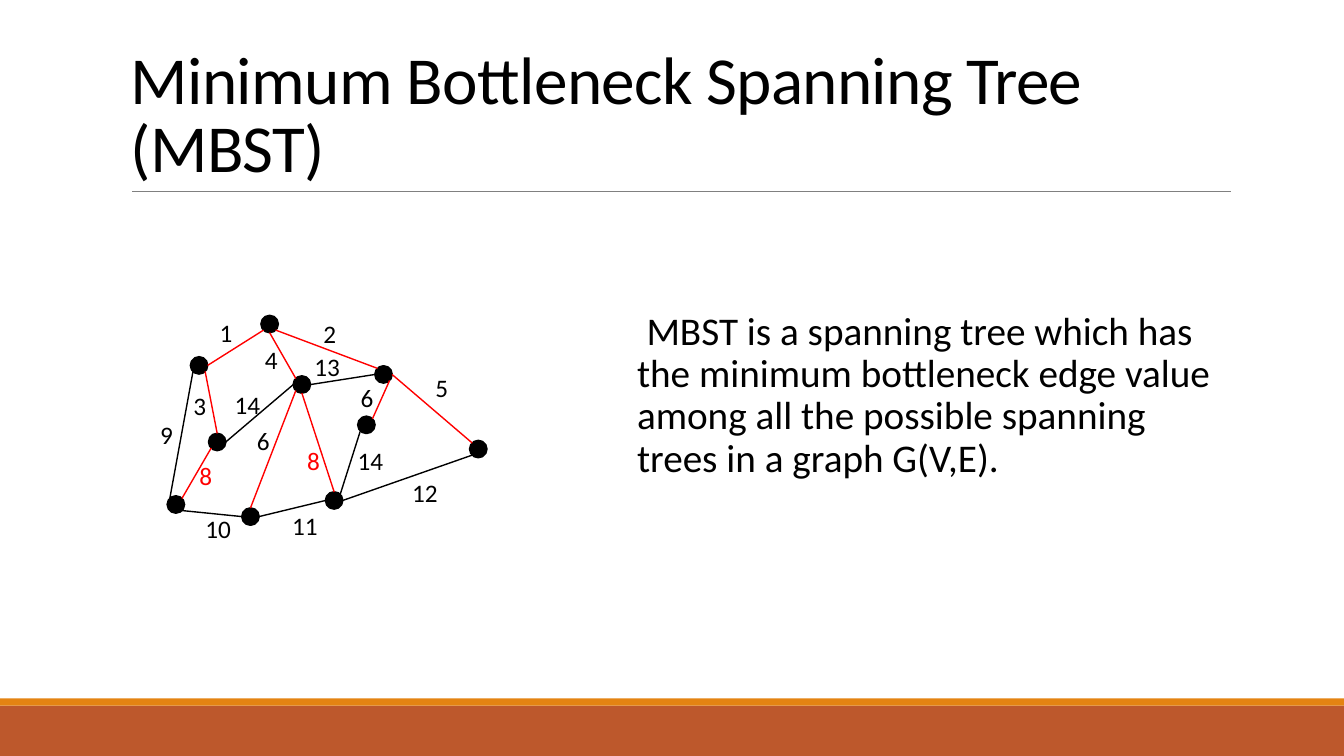
"""Draw the minimum bottleneck spanning tree slide."""
from dataclasses import dataclass
from math import cos, radians, sin

from lxml import etree
from pptx import Presentation
from pptx import util as u
from pptx.dml.color import RGBColor
from pptx.enum import shapes, text
from pptx.oxml import ns

COLOURS = {"ink": "000000", "tree": "FF0000", "rule": "808080",
           "band": "BD582C", "stripe": "E48312"}
CELL = u.Inches(0.1)
COLUMNS, ROWS = 133.33, 75
DIAMETER = 1.7
COMPASS = {"E": 0, "SE": 45, "S": 90, "SW": 135,
           "W": 180, "NW": 225, "N": 270, "NE": 315}


@dataclass(frozen=True)
class Node:
    """A vertex, placed by the column and row of its top-left corner."""
    column: float
    row: float

    def site(self, direction: str) -> tuple[float, float]:
        """Return the point of the rim in a compass direction."""
        angle, radius = radians(COMPASS[direction]), DIAMETER / 2
        return (self.column + radius * (1 + cos(angle)),
                self.row + radius * (1 + sin(angle)))


@dataclass(frozen=True)
class Edge:
    """A line between the rims of two nodes."""
    start: str
    leaving: str
    end: str
    arriving: str
    colour: str = "ink"


@dataclass(frozen=True)
class Weight:
    """The number beside an edge."""
    value: int
    column: float
    row: float
    colour: str = "ink"


NODES = {
    "left": Node(18.9, 35.4), "top": Node(25.9, 31.3),
    "hub": Node(29.1, 37.3), "inner": Node(20.7, 43),
    "middle": Node(35.5, 41.3), "base": Node(24, 50.4),
    "right": Node(37.2, 36.3), "corner": Node(16.6, 49.2),
    "foot": Node(32.3, 48.8), "far": Node(46.6, 43.7),
}
EDGES = [
    Edge("top", "SW", "left", "E", "tree"),
    Edge("top", "S", "hub", "NW", "tree"),
    Edge("top", "SE", "right", "NW", "tree"),
    Edge("right", "SE", "middle", "NE", "tree"),
    Edge("right", "E", "far", "NW", "tree"),
    Edge("hub", "S", "foot", "N", "tree"),
    Edge("left", "SE", "inner", "N", "tree"),
    Edge("hub", "SW", "base", "N", "tree"),
    Edge("inner", "SW", "corner", "NE", "tree"),
    Edge("inner", "E", "hub", "W"),
    Edge("corner", "SE", "base", "W"),
    Edge("hub", "E", "right", "W"),
    Edge("left", "SW", "corner", "NW"),
    Edge("foot", "E", "far", "SW"),
    Edge("middle", "SW", "foot", "NE"),
    Edge("base", "E", "foot", "W"),
]
WEIGHTS = [
    Weight(1, 20.8, 31), Weight(2, 31.1, 31.1), Weight(3, 18.2, 38.2),
    Weight(4, 25.3, 33.7), Weight(5, 42.2, 36.4), Weight(6, 24.5, 41.7),
    Weight(6, 34.8, 37.4), Weight(8, 29.5, 43.7, "tree"),
    Weight(8, 18.8, 45.2, "tree"), Weight(9, 14.9, 41.1),
    Weight(10, 19.4, 50.4), Weight(11, 28, 50.1), Weight(12, 39.9, 46.9),
    Weight(13, 30.2, 34.4), Weight(14, 22.3, 38.1), Weight(14, 34.5, 43.7),
]


def cells(*counts: float) -> list[int]:
    """Turn counts of grid cells into lengths."""
    return [round(count * CELL) for count in counts]


def colour(name: str) -> RGBColor:
    """Look up a named colour."""
    return RGBColor.from_string(COLOURS[name])


def apply(target, formats: dict) -> None:
    """Set each format value on an object."""
    for name, value in formats.items():
        setattr(target, name, value)


def add_solid(page, kind, area: tuple, fill: str, outline: float = 0):
    """Add a filled preset shape, outlined in its own colour if asked."""
    shape = page.shapes.add_shape(kind, *cells(*area))
    shape.shadow.inherit = False
    shape.fill.solid()
    shape.fill.fore_color.rgb = colour(fill)
    if outline:
        shape.line.color.rgb = colour(fill)
        shape.line.width = u.Pt(outline)
    else:
        shape.line.fill.background()
    return shape


def add_line(page, start: tuple, end: tuple, name: str, width: float) -> None:
    """Add a straight line between two grid points."""
    line = page.shapes.add_connector(shapes.MSO_CONNECTOR.STRAIGHT, *cells(*start, *end))
    line.line.color.rgb = colour(name)
    line.line.width = u.Pt(width)
    etree.SubElement(line._element.spPr, ns.qn("a:effectLst"))


def add_text(page, area: tuple, words: str, size: float, name: str = "ink",
             frame: dict | None = None, spacing: dict | None = None):
    """Add a text box with one paragraph and return that paragraph."""
    box = page.shapes.add_textbox(*cells(*area))
    apply(box.text_frame, {"word_wrap": True, **(frame or {})})
    para = box.text_frame.paragraphs[0]
    apply(para, spacing or {})
    span = para.add_run()
    span.text = words
    apply(span.font, {"name": "Calibri", "size": u.Pt(size)})
    span.font.color.rgb = colour(name)
    return para


def add_blank_bullet(para) -> None:
    """Give a paragraph a hanging indent behind a blank bullet."""
    properties = para._p.get_or_add_pPr()
    properties.set("marL", str(CELL))
    properties.set("indent", str(-CELL))
    tint = etree.SubElement(properties, ns.qn("a:buClr"))
    etree.SubElement(tint, ns.qn("a:srgbClr"), val=COLOURS["stripe"])
    etree.SubElement(properties, ns.qn("a:buChar"), char=" ")


def draw_frame(page) -> None:
    """Draw the bottom bands, the rule, the title and the definition."""
    rectangle = shapes.MSO_SHAPE.RECTANGLE
    add_solid(page, rectangle, (0, ROWS - 5, COLUMNS, 5), "band")
    add_solid(page, rectangle, (0, ROWS - 5.7, COLUMNS, 0.7), "stripe")
    add_line(page, (13.1, 19), (122.1, 19), "rule", 0.5)
    title = add_text(page, (12, 3.1, 110, 15.9),
                     "Minimum Bottleneck Spanning Tree (MBST)", 48,
                     frame={"vertical_anchor": text.MSO_ANCHOR.BOTTOM},
                     spacing={"line_spacing": 0.85})
    title.runs[0]._r.get_or_add_rPr().set("spc", "-50")
    definition = add_text(
        page, (62.2, 30.4, 59.8, 21.8),
        "MBST is a spanning tree which has the minimum bottleneck edge value "
        "among all the possible spanning trees in a graph G(V,E).", 28,
        frame={"margin_left": 0, "margin_right": 0},
        spacing={"line_spacing": 0.9, "space_before": u.Pt(12),
                 "space_after": u.Pt(2)})
    add_blank_bullet(definition)


def draw_graph(page) -> None:
    """Draw the nodes, the edges and their weights."""
    for node in NODES.values():
        add_solid(page, shapes.MSO_SHAPE.OVAL,
                  (node.column, node.row, DIAMETER, DIAMETER), "ink", 1.25)
    for edge in EDGES:
        add_line(page, NODES[edge.start].site(edge.leaving),
                 NODES[edge.end].site(edge.arriving), edge.colour, 1)
    for weight in WEIGHTS:
        width = 3.3 if weight.value < 10 else 4.6
        add_text(page, (weight.column, weight.row, width, 4),
                 str(weight.value), 18, weight.colour,
                 frame={"word_wrap": False,
                        "auto_size": text.MSO_AUTO_SIZE.SHAPE_TO_FIT_TEXT})


def main() -> None:
    """Build and save the deck."""
    deck = Presentation()
    width, height = cells(COLUMNS, ROWS)
    apply(deck, {"slide_width": width, "slide_height": height})
    page = deck.slides.add_slide(deck.slide_layouts[6])
    draw_frame(page)
    draw_graph(page)
    deck.save("out.pptx")


if __name__ == "__main__":
    main()
